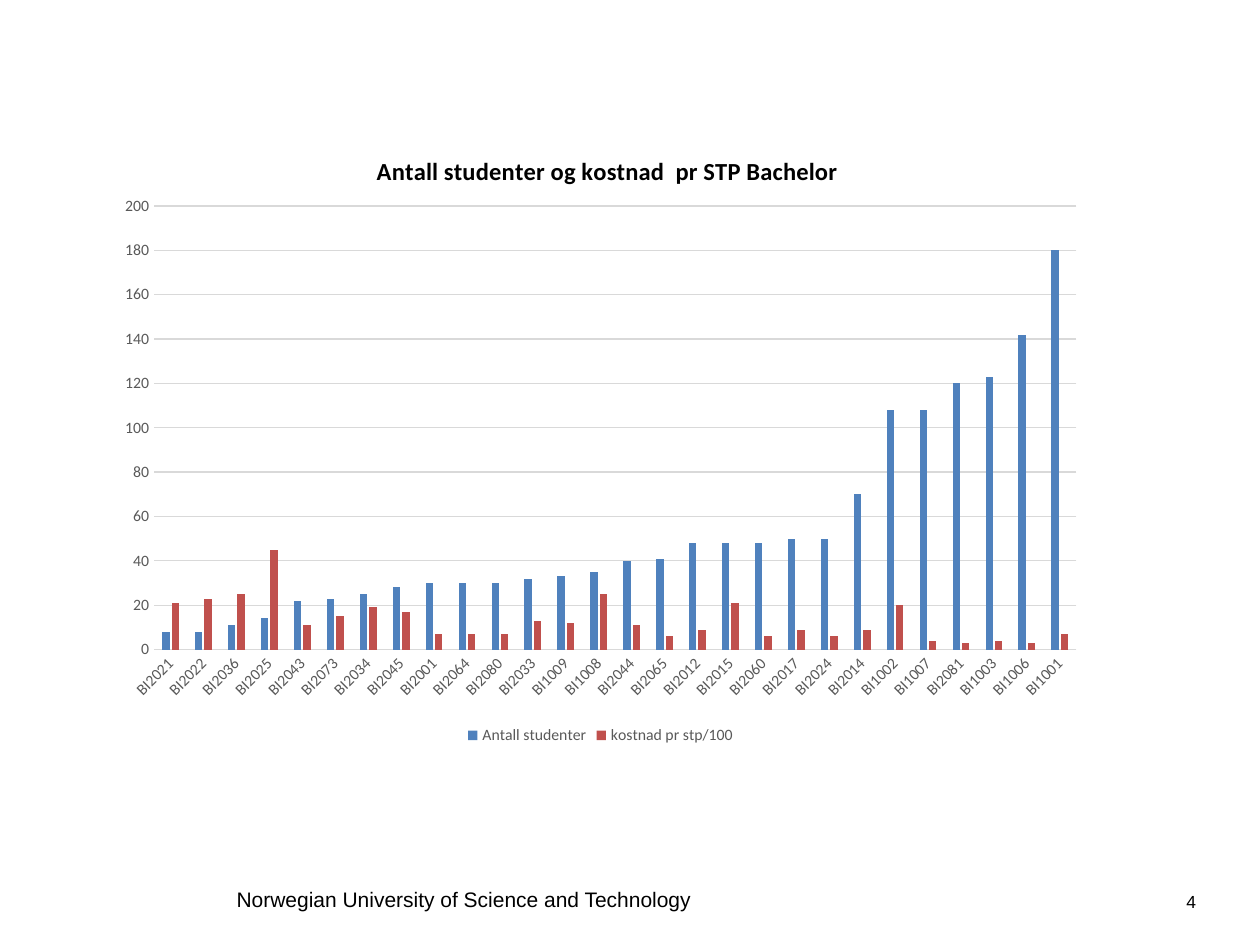
from pptx import Presentation
from pptx.chart.data import CategoryChartData
from pptx.dml.color import RGBColor
from pptx.enum.chart import XL_CHART_TYPE, XL_LEGEND_POSITION, XL_TICK_MARK
from pptx.enum.text import PP_ALIGN
from pptx.oxml import parse_xml
from pptx.oxml.ns import nsdecls, qn
from pptx.util import Inches, Pt

COLUMNS = XL_CHART_TYPE.COLUMN_CLUSTERED
LEGEND_BOTTOM = XL_LEGEND_POSITION.BOTTOM
NO_TICKS = XL_TICK_MARK.NONE
LEFT, CENTER = PP_ALIGN.LEFT, PP_ALIGN.CENTER

BLACK = RGBColor(0x00, 0x00, 0x00)
GRAY = RGBColor(0x59, 0x59, 0x59)
LIGHT_GRAY = RGBColor(0xD9, 0xD9, 0xD9)
BLUE = RGBColor(0x4F, 0x81, 0xBD)
RED = RGBColor(0xC0, 0x50, 0x4D)

CHART_FONT = {"name": "Calibri", "size": Pt(10)}
LABEL_FONT = {"name": "Calibri", "size": Pt(9)}
TITLE_FONT = {"name": "Calibri", "size": Pt(14), "bold": True}
FOOTER_FONT = {"name": "Arial", "size": Pt(12)}
NUMBER_FONT = {"name": "Arial", "size": Pt(10)}

TITLE = "Antall studenter og kostnad  pr STP Bachelor"
COURSES = [
    ("BI2021", 8, 21), ("BI2022", 8, 23), ("BI2036", 11, 25), ("BI2025", 14, 45),
    ("BI2043", 22, 11), ("BI2073", 23, 15), ("BI2034", 25, 19), ("BI2045", 28, 17),
    ("BI2001", 30, 7), ("BI2064", 30, 7), ("BI2080", 30, 7), ("BI2033", 32, 13),
    ("BI1009", 33, 12), ("BI1008", 35, 25), ("BI2044", 40, 11), ("BI2065", 41, 6),
    ("BI2012", 48, 9), ("BI2015", 48, 21), ("BI2060", 48, 6), ("BI2017", 50, 9),
    ("BI2024", 50, 6), ("BI2014", 70, 9), ("BI1002", 108, 20), ("BI1007", 108, 4),
    ("BI2081", 120, 3), ("BI1003", 123, 4), ("BI1006", 142, 3), ("BI1001", 180, 7),
]
SERIES_COLORS = [BLUE, RED]


def format_font(font, values, color):
    for name, value in values.items():
        setattr(font, name, value)
    font.color.rgb = color


def add_label(slide, text, bounds, font, alignment):
    shape = slide.shapes.add_textbox(*map(Inches, bounds))
    shape.text_frame.word_wrap = True
    paragraph = shape.text_frame.paragraphs[0]
    paragraph.text = text
    paragraph.alignment = alignment
    format_font(paragraph.font, font, BLACK)


def set_layout(element, index, target, fractions):
    layout = element.find(qn("c:layout"))
    if layout is not None:
        element.remove(layout)
    places = "".join(
        f'<c:{name}Mode val="edge"/>' for name in fractions if name in "xy"
    ) + "".join(f'<c:{name} val="{value}"/>' for name, value in fractions.items())
    element.insert(index, parse_xml(
        f'<c:layout {nsdecls("c")}><c:manualLayout>{target}{places}'
        "</c:manualLayout></c:layout>"
    ))


def format_line(line, color):
    line.color.rgb = color
    line.width = Pt(0.75)


def format_axes(chart):
    category_axis, value_axis = chart.category_axis, chart.value_axis
    for axis in (category_axis, value_axis):
        axis.major_tick_mark = axis.minor_tick_mark = NO_TICKS
        format_font(axis.tick_labels.font, LABEL_FONT, GRAY)
    format_line(category_axis.format.line, LIGHT_GRAY)
    body = category_axis._element.find(qn("c:txPr")).find(qn("a:bodyPr"))
    body.set("rot", "-2700000")
    value_axis.minimum_scale = 0
    value_axis.maximum_scale = 200
    value_axis.major_unit = 20
    value_axis.format.line.fill.background()
    format_line(value_axis.major_gridlines.format.line, LIGHT_GRAY)


def format_title(chart):
    chart.has_title = True
    title = chart.chart_title
    paragraph = title.text_frame.paragraphs[0]
    run = paragraph.add_run()
    run.text = TITLE
    format_font(run.font, TITLE_FONT, BLACK)
    set_layout(title._element, 1, "", {"x": 0.27, "y": 0.04})


def add_course_chart(slide, bounds):
    names, students, costs = zip(*COURSES)
    data = CategoryChartData()
    data.categories = names
    data.add_series("Antall studenter", students)
    data.add_series("kostnad pr stp/100", costs)
    chart = slide.shapes.add_chart(COLUMNS, *map(Inches, bounds), data).chart
    format_font(chart.font, CHART_FONT, BLACK)
    format_title(chart)
    format_axes(chart)
    chart.has_legend = True
    chart.legend.position = LEGEND_BOTTOM
    chart.legend.include_in_layout = False
    format_font(chart.legend.font, LABEL_FONT, GRAY)
    plot = chart.plots[0]
    plot.vary_by_categories = False
    plot.gap_width = 219
    plot.overlap = -27
    for series, color in zip(plot.series, SERIES_COLORS):
        series.format.fill.solid()
        series.format.fill.fore_color.rgb = color
    set_layout(
        chart._chartSpace.chart.plotArea, 0, '<c:layoutTarget val="inner"/>',
        {"x": 0.05, "y": 0.13, "w": 0.93, "h": 0.71},
    )


def main():
    presentation = Presentation()
    presentation.slide_width = Inches(10)
    presentation.slide_height = Inches(7.5)
    slide = presentation.slides.add_slide(presentation.slide_layouts[6])
    add_label(slide, "Norwegian University of Science and Technology",
              (1.78, 6.99, 4.17, 0.3), FOOTER_FONT, LEFT)
    add_label(slide, "4", (9.27, 7.02, 0.37, 0.4), NUMBER_FONT, CENTER)
    add_course_chart(slide, (0.83, 0.99, 7.87, 4.96))
    presentation.save("out.pptx")


if __name__ == "__main__":
    main()
